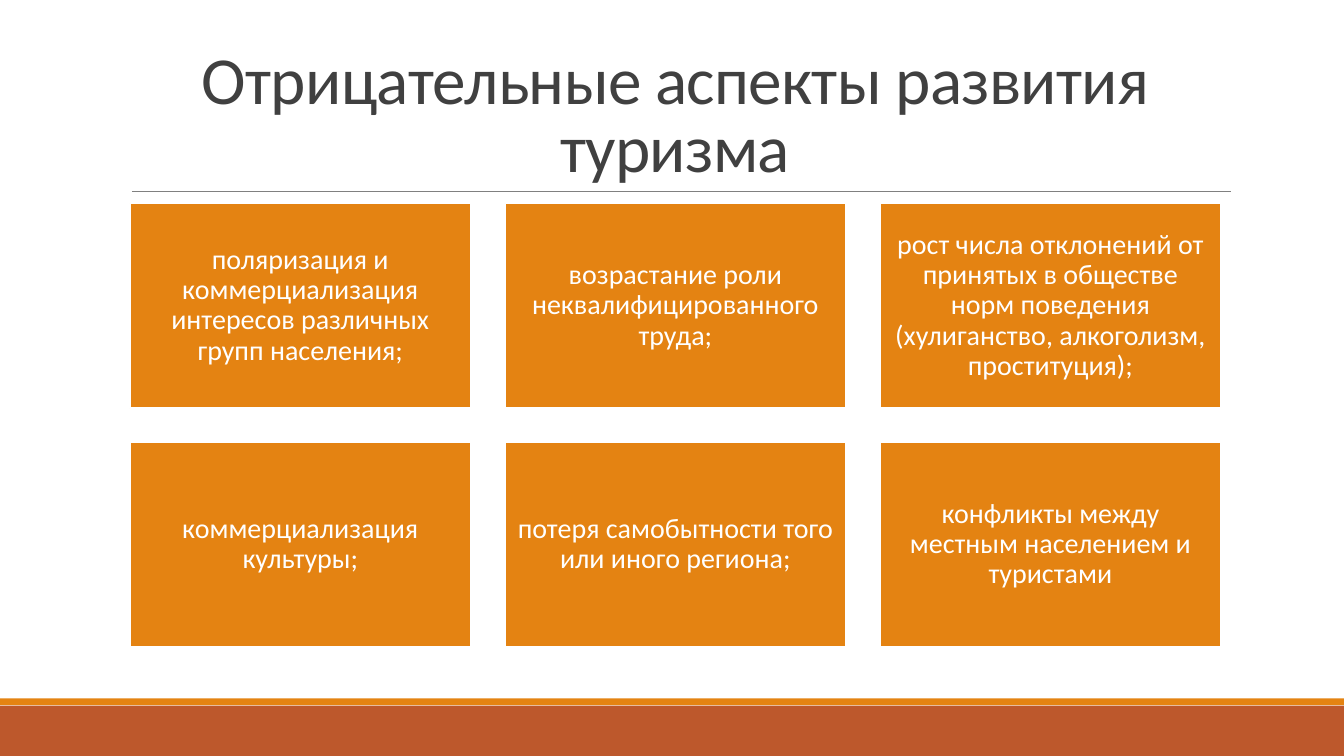
from lxml import etree
from pptx import Presentation
from pptx.dml.color import RGBColor
from pptx.enum import shapes, text
from pptx.oxml import ns
from pptx.util import Pt

COLORS = {
    "orange": "E48312",
    "rust": "BD582C",
    "rule": "808080",
    "title": "404040",
    "white": "FFFFFF",
}


def color(name):
    return RGBColor.from_string(COLORS[name])


def write(shape, content, size, ink, line_spacing, anchor, inset_x, inset_y, tracking=0):
    """Fill a shape with one centred paragraph; tracking is in points."""
    frame = shape.text_frame
    frame.word_wrap = True
    frame.vertical_anchor = anchor
    frame.margin_left = frame.margin_right = Pt(inset_x)
    frame.margin_top = frame.margin_bottom = Pt(inset_y)
    paragraph = frame.paragraphs[0]
    paragraph.alignment = text.PP_ALIGN.CENTER
    paragraph.line_spacing = line_spacing
    run = paragraph.add_run()
    run.text = content
    run.font.name = "Calibri"
    run.font.size = Pt(size)
    run.font.color.rgb = color(ink)
    if tracking:
        run._r.get_or_add_rPr().set("spc", str(round(tracking * 100)))


prs = Presentation()
prs.slide_width, prs.slide_height = Pt(960), Pt(540)
slide = prs.slides.add_slide(prs.slide_layouts[6])

# Footer bands
for top, height, fill in [(504, 36, "rust"), (498.8, 5, "orange")]:
    band = slide.shapes.add_shape(
        shapes.MSO_SHAPE.RECTANGLE, 0, Pt(top), prs.slide_width, Pt(height))
    band.shadow.inherit = False
    band.fill.solid()
    band.fill.fore_color.rgb = color(fill)
    band.line.fill.background()

# Title and the rule below it
rule = slide.shapes.add_connector(
    shapes.MSO_CONNECTOR.STRAIGHT, Pt(94.3), Pt(136.8), Pt(879.1), Pt(136.8))
rule.line.color.rgb = color("rule")
rule.line.width = Pt(0.5)
etree.SubElement(rule._element.spPr, ns.qn("a:effectLst"))

title = slide.shapes.add_textbox(Pt(86.4), Pt(22.3), Pt(792), Pt(114.5))
write(title, "Отрицательные аспекты развития туризма", size=48, ink="title",
      line_spacing=0.85, anchor=text.MSO_ANCHOR.BOTTOM,
      inset_x=7.2, inset_y=3.6, tracking=-0.5)

# Grid of negative aspects
aspects = [
    "поляризация и коммерциализация интересов различных групп населения;",
    "возрастание роли неквалифицированного труда;",
    "рост числа отклонений от принятых в обществе норм поведения "
    "(хулиганство, алкоголизм, проституция);",
    "коммерциализация культуры;",
    "потеря самобытности того или иного региона;",
    "конфликты между местным населением и туристами",
]
COLUMNS = 3
GRID_LEFT, GRID_TOP = 92.8, 145.4
CARD_WIDTH, CARD_HEIGHT, GAP = 243.5, 146.1, 24.4

for index, aspect in enumerate(aspects):
    row, column = divmod(index, COLUMNS)
    card = slide.shapes.add_shape(
        shapes.MSO_SHAPE.RECTANGLE,
        Pt(GRID_LEFT + column * (CARD_WIDTH + GAP)),
        Pt(GRID_TOP + row * (CARD_HEIGHT + GAP)),
        Pt(CARD_WIDTH), Pt(CARD_HEIGHT))
    card.shadow.inherit = False
    card.fill.solid()
    card.fill.fore_color.rgb = color("orange")
    card.line.color.rgb = color("white")
    card.line.width = Pt(1.25)
    write(card, aspect, size=20, ink="white", line_spacing=0.9,
          anchor=text.MSO_ANCHOR.MIDDLE, inset_x=6, inset_y=6)

prs.save("out.pptx")
